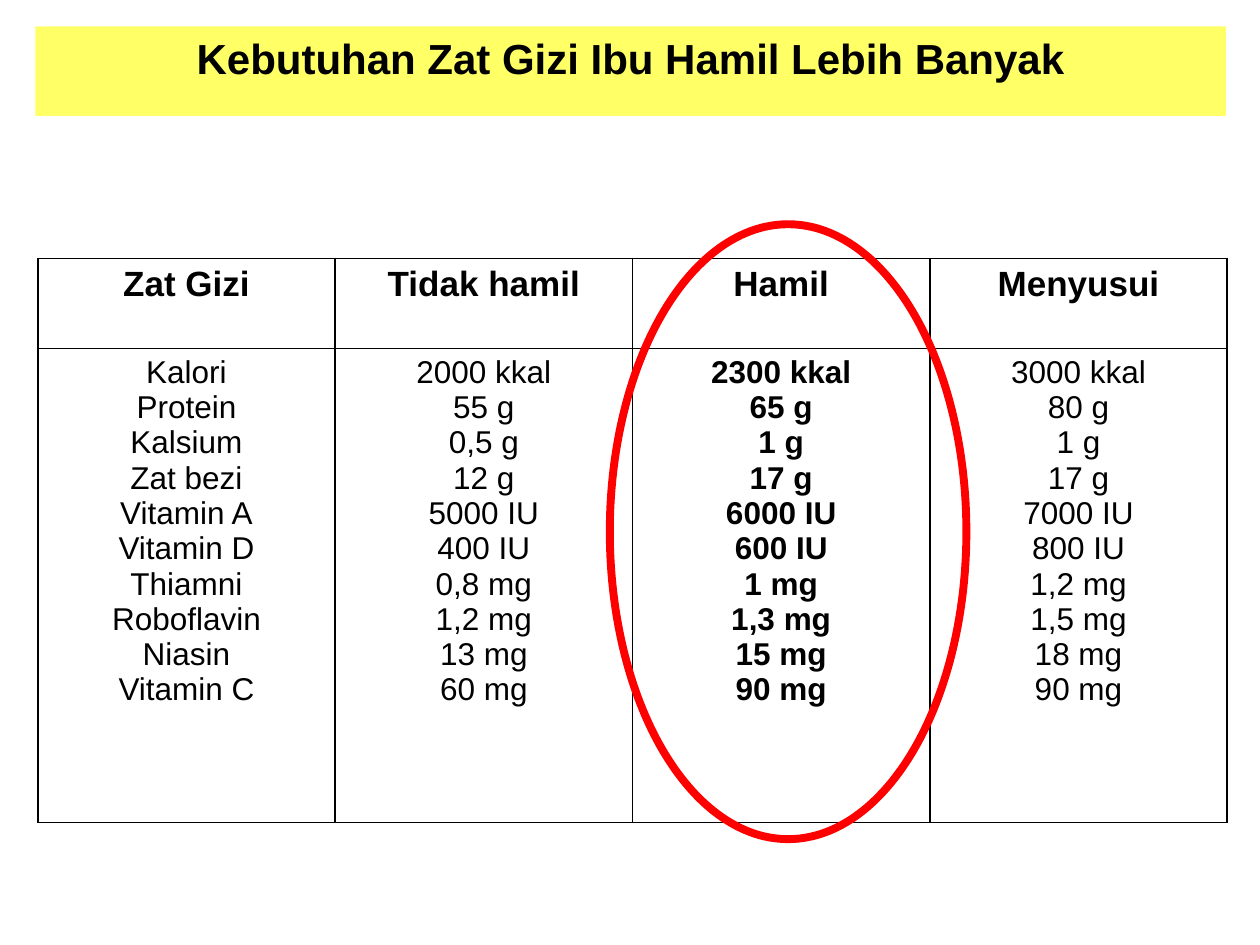
from lxml import etree
from pptx import Presentation
from pptx.dml.color import RGBColor
from pptx.enum import shapes, text
from pptx.oxml import ns
from pptx.util import Pt

BLACK = RGBColor(0, 0, 0)
YELLOW = RGBColor(0xFF, 0xFF, 0x66)
RED = RGBColor(0xFF, 0, 0)

COLUMNS = {
    "Zat Gizi": ["Kalori", "Protein", "Kalsium", "Zat bezi", "Vitamin A",
                 "Vitamin D", "Thiamni", "Roboflavin", "Niasin", "Vitamin C"],
    "Tidak hamil": ["2000 kkal", "55 g", "0,5 g", "12 g", "5000 IU",
                    "400 IU", "0,8 mg", "1,2 mg", "13 mg", "60 mg"],
    "Hamil": ["2300 kkal", "65 g", "1 g", "17 g", "6000 IU",
              "600 IU", "1 mg", "1,3 mg", "15 mg", "90 mg"],
    "Menyusui": ["3000 kkal", "80 g", "1 g", "17 g", "7000 IU",
                 "800 IU", "1,2 mg", "1,5 mg", "18 mg", "90 mg"],
}
HIGHLIGHT = "Hamil"
HEADER_SHARE = 0.16


def write(frame, lines, size, bold=False, color=BLACK, before=0):
    """Fill a text frame with one centred paragraph per line."""
    frame.word_wrap = True
    frame.vertical_anchor = text.MSO_ANCHOR.TOP
    for number, line in enumerate(lines):
        para = frame.add_paragraph() if number else frame.paragraphs[0]
        para.alignment = text.PP_ALIGN.CENTER
        para.space_before = Pt(before)
        span = para.add_run()
        span.text = line
        span.font.name = "Arial"
        span.font.size = Pt(size)
        span.font.bold = bold
        span.font.color.rgb = color


def add_shape(page, kind, box):
    shape = page.shapes.add_shape(kind, *map(Pt, box))
    shape.shadow.inherit = False
    return shape


def add_title(page, box):
    band = add_shape(page, shapes.MSO_SHAPE.RECTANGLE, box)
    band.fill.solid()
    band.fill.fore_color.rgb = YELLOW
    band.line.fill.background()
    write(band.text_frame, ["Kebutuhan Zat Gizi Ibu Hamil Lebih Banyak"],
          size=24, bold=True, before=4.8)


def add_borders(cell, color=BLACK, width=1):
    properties = cell._tc.get_or_add_tcPr()
    for position, side in enumerate(("lnL", "lnR", "lnT", "lnB")):
        line = etree.Element(ns.qn(f"a:{side}"), w=str(Pt(width)))
        fill = etree.SubElement(line, ns.qn("a:solidFill"))
        etree.SubElement(fill, ns.qn("a:srgbClr"), val=str(color))
        properties.insert(position, line)


def add_nutrient_table(page, box):
    """Put the column names in one row and all their values in a second."""
    left, top, width, height = box
    table = page.shapes.add_table(2, len(COLUMNS), *map(Pt, box)).table
    table.first_row = table.horz_banding = False
    table.rows[0].height = Pt(height * HEADER_SHARE)
    table.rows[1].height = Pt(height * (1 - HEADER_SHARE))
    for index, (name, values) in enumerate(COLUMNS.items()):
        table.columns[index].width = Pt(width / len(COLUMNS))
        header, body = table.cell(0, index), table.cell(1, index)
        write(header.text_frame, [name], size=20, bold=True)
        write(body.text_frame, values, size=18, bold=name == HIGHLIGHT)
        for cell in (header, body):
            cell.fill.background()
            add_borders(cell)


def add_highlight(page, box):
    ring = add_shape(page, shapes.MSO_SHAPE.OVAL, box)
    ring.fill.background()
    ring.line.color.rgb = RED
    ring.line.width = Pt(4.5)


def main():
    deck = Presentation()
    deck.slide_width, deck.slide_height = Pt(720), Pt(540)
    page = deck.slides.add_slide(deck.slide_layouts[6])
    add_title(page, (20.16, 15.12, 680.4, 51.12))
    add_nutrient_table(page, (21.6, 147.6, 679.68, 322.56))
    add_highlight(page, (348.48, 128.16, 203.76, 351.36))
    deck.save("out.pptx")


if __name__ == "__main__":
    main()
